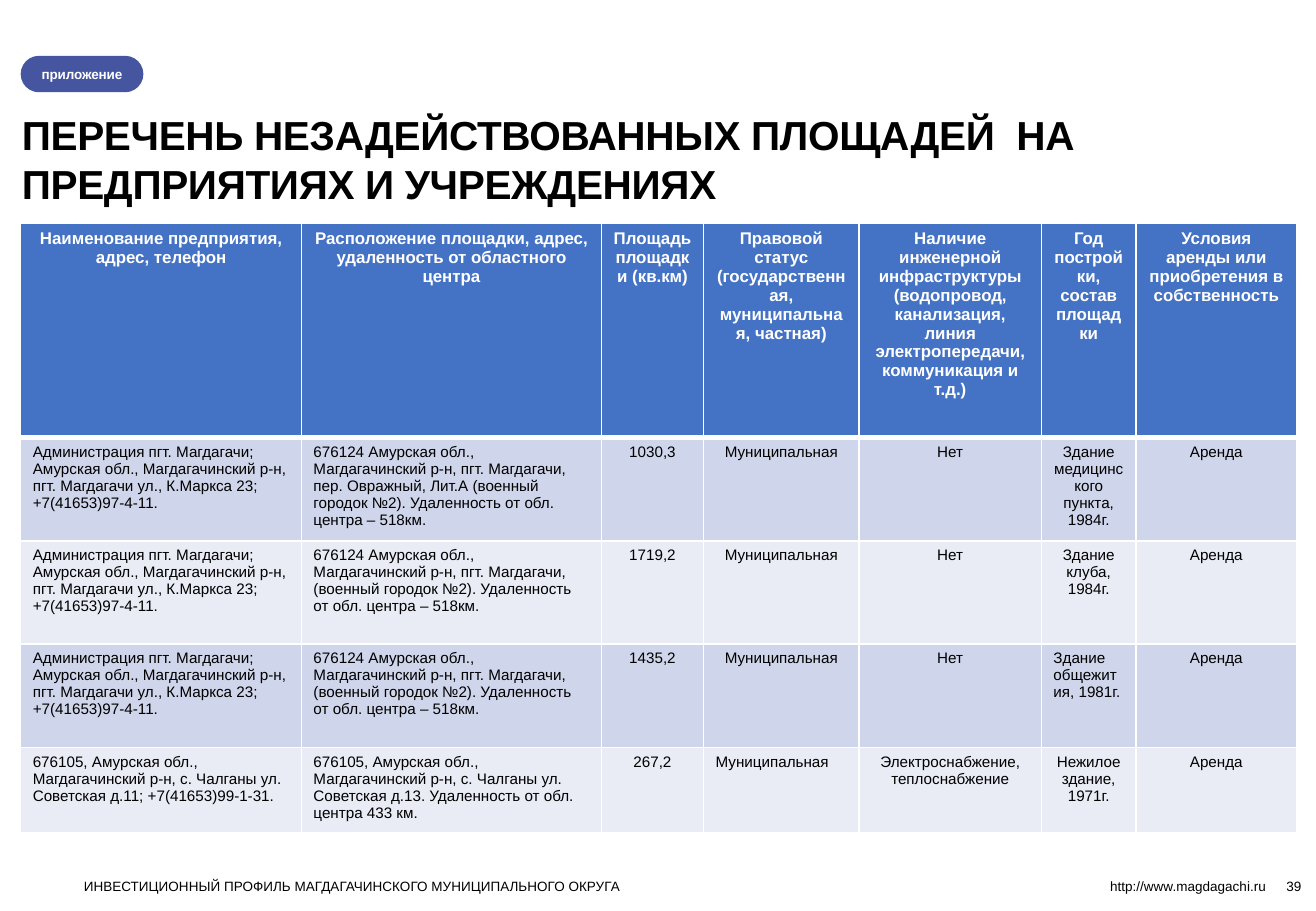
import pptx
import pptx.util
import pptx.dml.color
import pptx.enum.shapes
import pptx.enum.text
from lxml import etree
from pptx.oxml.ns import qn

ALIGN = pptx.enum.text.PP_ALIGN
ANCHOR = pptx.enum.text.MSO_ANCHOR
SLIDE_W, SLIDE_H = 10.83, 7.5
MARGIN = 0.17
FONT = "Arial"
BLACK, WHITE = "000000", "FFFFFF"
HEADER_FILL, BAND_FILLS = "4472C4", ("CFD5EA", "E9EBF5")
BADGE_FILL = "46559F"

COLUMN_WIDTHS = (2.31, 2.47, 0.84, 1.28, 1.5, 0.78, 1.32)
ROW_HEIGHTS = (1.76, 0.85, 0.85, 0.85, 0.7)
LEFT_COLUMNS = (0, 1)
LEFT_CELLS = ((3, 5), (4, 3))

ADMINISTRATION = ("Администрация пгт. Магдагачи; Амурская обл., Магдагачинский р-н, "
                  "пгт. Магдагачи ул., К.Маркса 23; +7(41653)97-4-11.")
GARRISON = ("676124 Амурская обл., Магдагачинский р-н, пгт. Магдагачи, "
            "(военный городок №2). Удаленность от обл. центра – 518км.")
SITES = (
    ("Наименование предприятия, адрес, телефон",
     "Расположение площадки, адрес, удаленность от областного центра",
     "Площадь площадки (кв.км)",
     "Правовой статус (государственная, муниципальная, частная)",
     "Наличие инженерной инфраструктуры (водопровод, канализация, "
     "линия электропередачи, коммуникация и т.д.)",
     "Год постройки, состав площадки",
     "Условия аренды или приобретения в собственность"),
    (ADMINISTRATION,
     "676124 Амурская обл., Магдагачинский р-н, пгт. Магдагачи, пер. Овражный, "
     "Лит.А (военный городок №2). Удаленность от обл. центра – 518км.",
     "1030,3", "Муниципальная", "Нет", "Здание медицинского пункта, 1984г.", "Аренда"),
    (ADMINISTRATION, GARRISON,
     "1719,2", "Муниципальная", "Нет", "Здание клуба, 1984г.", "Аренда"),
    (ADMINISTRATION, GARRISON,
     "1435,2", "Муниципальная", "Нет", "Здание общежития, 1981г.", "Аренда"),
    ("676105, Амурская обл., Магдагачинский р-н, с. Чалганы ул. Советская д.11; "
     "+7(41653)99-1-31.",
     "676105, Амурская обл., Магдагачинский р-н, с. Чалганы ул. Советская д.13. "
     "Удаленность от обл. центра 433 км.",
     "267,2", "Муниципальная", "Электроснабжение, теплоснабжение",
     "Нежилое здание, 1971г.", "Аренда"),
)


def inches(*lengths):
    return [pptx.util.Inches(length) for length in lengths]


def paint(fill, colour):
    fill.solid()
    fill.fore_color.rgb = pptx.dml.color.RGBColor.from_string(colour)


def write(frame, text, size, colour, bold=False, align=ALIGN.LEFT, spacing=0):
    """Set one paragraph of text; spacing is the tracking in points."""
    frame.word_wrap = True
    paragraph = frame.paragraphs[0]
    paragraph.text = text
    paragraph.alignment = align
    for run in paragraph.runs:
        run.font.name = FONT
        run.font.size = pptx.util.Pt(size)
        run.font.bold = bold
        paint(run.font.fill, colour)
        if spacing:
            run.font._element.set("spc", str(round(spacing * 100)))


def set_insets(frame):
    frame.margin_left = frame.margin_top = frame.margin_right = frame.margin_bottom = 0


def add_label(slide, box, text, size, anchor=ANCHOR.TOP, **style):
    frame = slide.shapes.add_textbox(*inches(*box)).text_frame
    set_insets(frame)
    frame.vertical_anchor = anchor
    write(frame, text, size, BLACK, **style)


def add_badge(slide, box):
    badge = slide.shapes.add_shape(
        pptx.enum.shapes.MSO_SHAPE.ROUNDED_RECTANGLE, *inches(*box))
    badge.adjustments[0] = 0.5
    badge.shadow.inherit = False
    paint(badge.fill, BADGE_FILL)
    badge.line.fill.background()
    set_insets(badge.text_frame)
    badge.text_frame.vertical_anchor = ANCHOR.MIDDLE
    write(badge.text_frame, "приложение", 8, WHITE, True, ALIGN.CENTER, -0.1)


def add_borders(cell, top, bottom):
    """Draw white cell edges; top and bottom are widths in points."""
    edges = (("a:lnL", 1), ("a:lnR", 1), ("a:lnT", top), ("a:lnB", bottom))
    properties = cell._tc.get_or_add_tcPr()
    for place, (edge, width) in enumerate(edges):
        line = etree.Element(qn(edge), w=str(pptx.util.Pt(width)))
        fill = etree.SubElement(line, qn("a:solidFill"))
        etree.SubElement(fill, qn("a:srgbClr"), val=WHITE)
        properties.insert(place, line)


def add_sites_table(slide, left, top):
    table = slide.shapes.add_table(
        len(SITES), len(COLUMN_WIDTHS),
        *inches(left, top, sum(COLUMN_WIDTHS), sum(ROW_HEIGHTS))).table
    table.horz_banding = False
    for column, width in zip(table.columns, COLUMN_WIDTHS):
        column.width = pptx.util.Inches(width)
    for r, site in enumerate(SITES):
        table.rows[r].height = pptx.util.Inches(ROW_HEIGHTS[r])
        header = r == 0
        for c, text in enumerate(site):
            cell = table.cell(r, c)
            paint(cell.fill, HEADER_FILL if header else BAND_FILLS[(r - 1) % 2])
            add_borders(cell, 3 if r == 1 else 1, 3 if header else 1)
            to_left = not header and (c in LEFT_COLUMNS or (r, c) in LEFT_CELLS)
            write(cell.text_frame, text, 10 if header else 9,
                  WHITE if header else BLACK, header,
                  ALIGN.LEFT if to_left else ALIGN.CENTER)


def add_footer(slide, top, height):
    add_label(slide, (0.69, top, 8, height),
              "ИНВЕСТИЦИОННЫЙ ПРОФИЛЬ МАГДАГАЧИНСКОГО МУНИЦИПАЛЬНОГО ОКРУГА", 8)
    add_label(slide, (8.69, top, 1.73, height), "http://www.magdagachi.ru", 8,
              align=ALIGN.RIGHT)
    add_label(slide, (9.91, top, 0.8, height), "39", 8, ANCHOR.BOTTOM, align=ALIGN.RIGHT)


def main():
    deck = pptx.Presentation()
    deck.slide_width, deck.slide_height = inches(SLIDE_W, SLIDE_H)
    slide = deck.slides.add_slide(deck.slide_layouts[6])
    add_label(slide, (MARGIN + 0.01, 0.58, 9.33, 1.45),
              "ПЕРЕЧЕНЬ НЕЗАДЕЙСТВОВАННЫХ ПЛОЩАДЕЙ  НА ПРЕДПРИЯТИЯХ И УЧРЕЖДЕНИЯХ",
              24, ANCHOR.MIDDLE, bold=True, spacing=-0.2)
    add_sites_table(slide, MARGIN, 1.84)
    add_badge(slide, (MARGIN, 0.46, 1.01, 0.3))
    add_footer(slide, 7.23, 0.13)
    deck.save("out.pptx")


if __name__ == "__main__":
    main()
